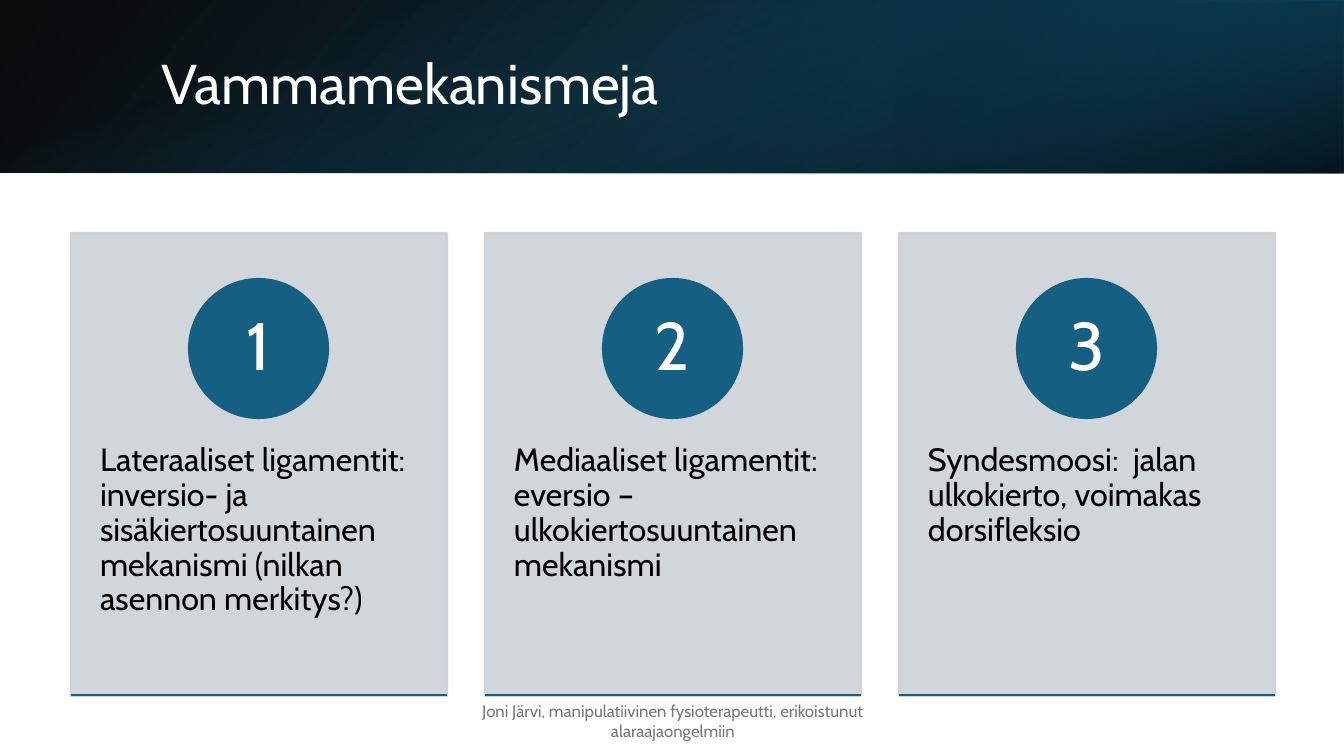
from lxml import etree
from pptx import Presentation
from pptx.dml.color import RGBColor
from pptx.enum.shapes import MSO_CONNECTOR, MSO_SHAPE
from pptx.enum.text import MSO_ANCHOR, PP_ALIGN
from pptx.oxml.ns import qn
from pptx.util import Emu, Pt

RECT, OVAL = MSO_SHAPE.RECTANGLE, MSO_SHAPE.OVAL
LINE = MSO_CONNECTOR.STRAIGHT
TOP, MIDDLE = MSO_ANCHOR.TOP, MSO_ANCHOR.MIDDLE
LEFT, CENTER = PP_ALIGN.LEFT, PP_ALIGN.CENTER

COLORS = {
    name: RGBColor.from_string(code)
    for name, code in {
        "black": "000000",
        "white": "FFFFFF",
        "blue": "156082",
        "deep": "104862",
        "night": "0B3041",
        "card": "CCD2D8",
        "gray": "797979",
    }.items()
}


def px(*sizes):
    return [Emu(round(size * 914400 / 100.8)) for size in sizes]


def write(shape, text, size, color, align, anchor, inset, space):
    frame = shape.text_frame
    frame.word_wrap = True
    frame.vertical_anchor = anchor
    frame.margin_left, frame.margin_top = px(*inset)
    frame.margin_right, frame.margin_bottom = px(*inset)
    line = frame.paragraphs[0]
    line.text = text
    line.alignment = align
    line.line_spacing = space
    line.font.size = Pt(size)
    line.font.name = "Cabin"
    line.font.color.rgb = COLORS[color]


deck = Presentation()
deck.slide_width, deck.slide_height = px(1344, 756)
slide = deck.slides.add_slide(deck.slide_layouts[5])
shapes = slide.shapes
title = shapes.title

layers = [
    ((0, 0, 1344, 173), 0, True, 140, [(0, "black", 96), (1, "deep", 100)]),
    ((896, 0, 448, 173), 180, True, 320, [(0.19, "night", 68), (1, "blue", 79)]),
    ((585, -585, 173, 1344), 90, False, 340, [(0.23, "blue", 0), (0.99, "black", 74)]),
]
for box, turn, flip, angle, stops in layers:
    band = shapes.add_shape(RECT, *px(*box))
    band.shadow.inherit = False
    band.line.fill.background()
    band.rotation = turn
    if flip:
        band._element.spPr.find(qn("a:xfrm")).set("flipH", "1")
    band.fill.gradient()
    band.fill.gradient_angle = 360 - angle
    for stop, (place, color, _) in zip(band.fill.gradient_stops, stops):
        stop.position = place
        stop.color.rgb = COLORS[color]
    tints = list(band._element.spPr.iter(qn("a:srgbClr")))
    for tint, (_, _, alpha) in zip(tints, stops):
        etree.SubElement(tint, qn("a:alpha"), val=str(alpha * 1000))

shapes._spTree.append(title._element)
title.left, title.top, title.width, title.height = px(151, 38, 1107, 97)
write(title, "Vammamekanismeja", 40, "white", LEFT, MIDDLE, (10, 5), 0.9)

causes = [
    "Lateraaliset ligamentit: inversio- ja sisäkiertosuuntainen mekanismi (nilkan asennon merkitys?)",
    "Mediaaliset ligamentit:  eversio – ulkokiertosuuntainen mekanismi",
    "Syndesmoosi:  jalan ulkokierto, voimakas dorsifleksio",
]
for index, cause in enumerate(causes):
    left = 71 + 414 * index

    card = shapes.add_shape(RECT, *px(left, 233, 376, 463))
    card.shadow.inherit = False
    card.fill.solid()
    card.fill.fore_color.rgb = COLORS["card"]
    card.line.color.rgb = COLORS["card"]
    card.line.width = Pt(1.5)
    for tint in card._element.spPr.iter(qn("a:srgbClr")):
        etree.SubElement(tint, qn("a:alpha"), val="90000")

    body = shapes.add_textbox(*px(left, 408, 376, 277))
    write(body, cause, 23, "black", LEFT, TOP, (29, 36), 0.9)

    disc = shapes.add_shape(OVAL, *px(left + 118, 279, 139, 139))
    disc.shadow.inherit = False
    disc.fill.solid()
    disc.fill.fore_color.rgb = COLORS["blue"]
    disc.line.color.rgb = COLORS["blue"]
    disc.line.width = Pt(1.5)
    write(disc, str(index + 1), 48, "white", CENTER, MIDDLE, (11, 1), 0.9)

    rule = shapes.add_connector(LINE, *px(left, 695, left + 376, 695))
    rule.line.color.rgb = COLORS["blue"]
    rule.line.width = Pt(1.5)
    etree.SubElement(rule._element.spPr, qn("a:effectLst"))

footer = shapes.add_textbox(*px(446, 701, 454, 40))
credit = "Joni Järvi, manipulatiivinen fysioterapeutti, erikoistunut alaraajaongelmiin"
write(footer, credit, 12, "gray", CENTER, MIDDLE, (10, 5), 1.0)

deck.save("out.pptx")
